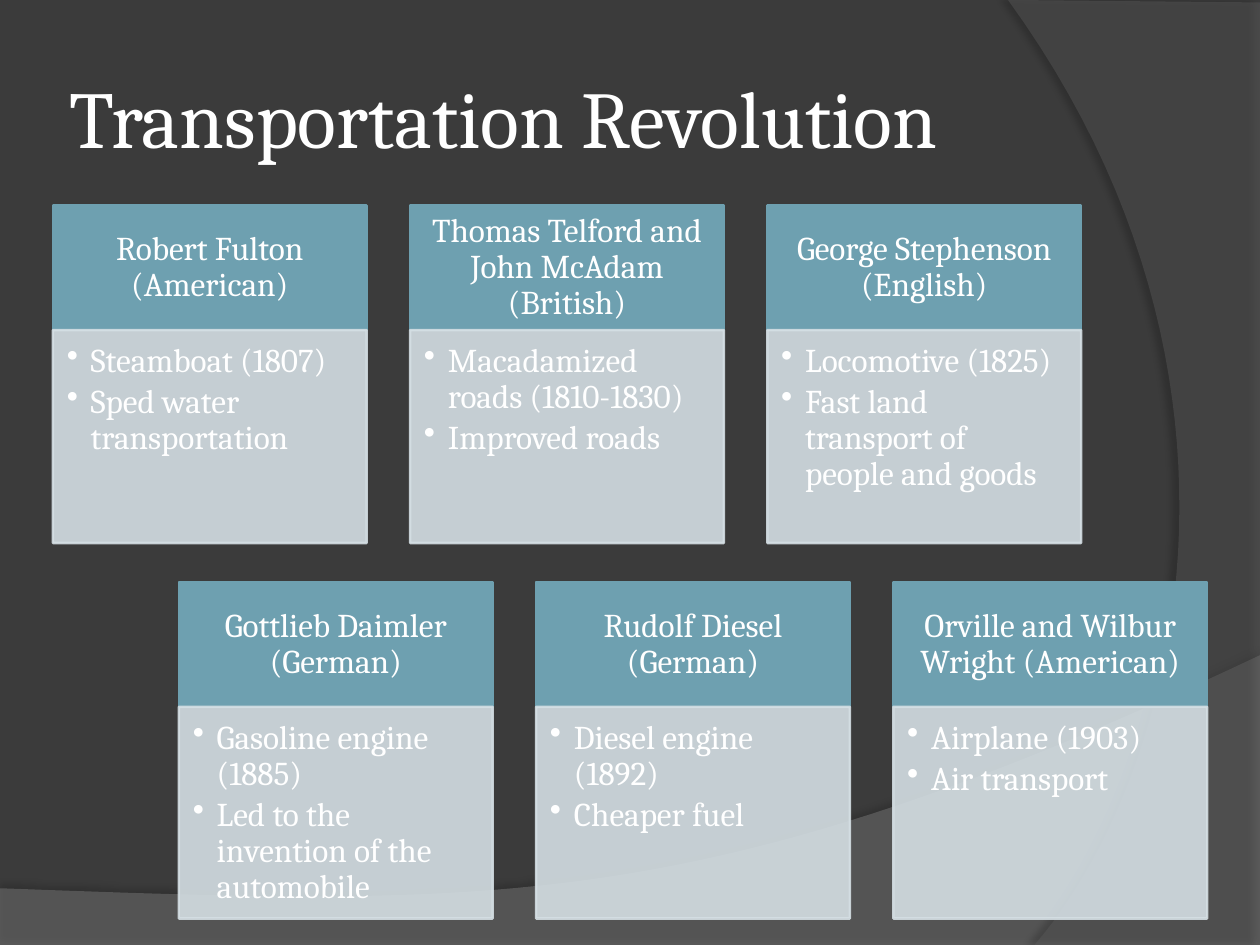
from dataclasses import dataclass

from lxml import etree
from pptx import Presentation
from pptx.dml.color import RGBColor
from pptx.enum.shapes import MSO_SHAPE
from pptx.enum.text import MSO_ANCHOR, PP_ALIGN
from pptx.oxml.ns import qn
from pptx.util import Inches, Pt

RECTANGLE = MSO_SHAPE.RECTANGLE
TOP = MSO_ANCHOR.TOP
MIDDLE = MSO_ANCHOR.MIDDLE
LEFT = PP_ALIGN.LEFT
CENTER = PP_ALIGN.CENTER


@dataclass(frozen=True)
class Theme:
    font: str = "Cambria"
    background: str = "3B3B3B"
    text: str = "FFFFFF"
    header: str = "6EA0B0"
    body: str = "D5DFE4"
    lower_wave: str = "7F7F7F"
    right_arc: str = "5E5E5E"
    shadow: str = "000000"
    title_size: float = 46
    card_size: float = 19
    border: float = 1.5


THEME = Theme()

CARD_WIDTH = 2.49
CARD_PITCH = 2.835
HEADER_HEIGHT = 0.99
HEADER_INSETS = (0.15, 0.08, 0.15, 0.08)
BODY_INSETS = (0.11, 0.11, 0.15, 0.17)
BULLET_INDENT = 0.19

ROWS = [
    (0.42, 1.63, 1.69, [
        ("Robert Fulton (American)", ["Steamboat (1807)", "Sped water transportation"]),
        ("Thomas Telford and John McAdam (British)",
         ["Macadamized roads (1810-1830)", "Improved roads"]),
        ("George Stephenson (English)",
         ["Locomotive (1825)", "Fast land transport of people and goods"]),
    ]),
    (1.42, 4.62, 1.68, [
        ("Gottlieb Daimler (German)",
         ["Gasoline engine (1885)", "Led to the invention of the automobile"]),
        ("Rudolf Diesel (German)", ["Diesel engine (1892)", "Cheaper fuel"]),
        ("Orville and Wilbur Wright (American)", ["Airplane (1903)", "Air transport"]),
    ]),
]


def set_attributes(target, values):
    for name, value in values.items():
        setattr(target, name, value)


def set_fill(fill, color, opacity=100):
    fill.solid()
    fill.fore_color.rgb = RGBColor.from_string(color)
    if opacity < 100:
        add_alpha(fill._xPr.find(qn("a:solidFill"))[0], opacity)


def add_alpha(color_element, opacity):
    etree.SubElement(color_element, qn("a:alpha"), val=str(opacity * 1000))


def add_shadow(shape, opacity, blur, distance, angle):
    effects = shape._element.spPr.find(qn("a:effectLst"))
    shadow = etree.SubElement(
        effects, qn("a:outerShdw"), blurRad=str(Pt(blur)), dist=str(Pt(distance)),
        dir=str(angle * 60000), algn="ctr", rotWithShape="0")
    color = etree.SubElement(shadow, qn("a:srgbClr"), val=THEME.shadow)
    add_alpha(color, opacity)


def curve_points(start, control_1, control_2, end, steps=48):
    points = []
    for step in range(1, steps + 1):
        t = step / steps
        weights = ((1 - t) ** 3, 3 * t * (1 - t) ** 2, 3 * t * t * (1 - t), t ** 3)
        points.append(tuple(
            sum(weight * value for weight, value in zip(weights, values))
            for values in zip(start, control_1, control_2, end)))
    return points


def add_backdrop(slide, points, color, opacity, shadow):
    corners = [(Inches(x), Inches(y)) for x, y in points]
    builder = slide.shapes.build_freeform(*corners[0])
    builder.add_line_segments(corners[1:], close=True)
    shape = builder.convert_to_shape()
    set_fill(shape.fill, color, opacity)
    shape.line.fill.background()
    shape.shadow.inherit = False
    add_shadow(shape, *shadow)


def write_text(shape, lines, size, anchor, insets, paragraph_format):
    frame = shape.text_frame
    margins = ("margin_left", "margin_top", "margin_right", "margin_bottom")
    set_attributes(frame, {"word_wrap": True, "vertical_anchor": anchor})
    set_attributes(frame, dict(zip(margins, map(Inches, insets))))
    for index, line in enumerate(lines):
        paragraph = frame.paragraphs[0] if index == 0 else frame.add_paragraph()
        set_attributes(paragraph, paragraph_format)
        run = paragraph.add_run()
        run.text = line
        set_attributes(run.font, {"name": THEME.font, "size": Pt(size)})
        run.font.color.rgb = RGBColor.from_string(THEME.text)


def add_bullets(shape):
    indent = Inches(BULLET_INDENT)
    for paragraph in shape.text_frame.paragraphs:
        properties = paragraph._p.get_or_add_pPr()
        properties.set("marL", str(indent))
        properties.set("indent", str(-indent))
        etree.SubElement(properties, qn("a:buChar"), char="•")


def add_panel(group, left, top, height, color, opacity=100):
    shape = group.shapes.add_shape(
        RECTANGLE, Inches(left), Inches(top), Inches(CARD_WIDTH), Inches(height))
    shape.shadow.inherit = False
    set_fill(shape.fill, color, opacity)
    set_fill(shape.line.fill, color, opacity)
    shape.line.width = Pt(THEME.border)
    return shape


def add_card(group, left, top, body_height, heading, points):
    header = add_panel(group, left, top, HEADER_HEIGHT, THEME.header)
    write_text(header, [heading], THEME.card_size, MIDDLE, HEADER_INSETS,
               {"alignment": CENTER, "line_spacing": 0.9})
    body = add_panel(group, left, top + HEADER_HEIGHT, body_height, THEME.body, 90)
    write_text(body, points, THEME.card_size, TOP, BODY_INSETS,
               {"alignment": LEFT, "line_spacing": 0.9, "level": 1,
                "space_after": Pt(0.15 * THEME.card_size)})
    add_bullets(body)


def add_title(slide, text):
    box = slide.shapes.add_textbox(Inches(0.5), Inches(0.3), Inches(8.17), Inches(1.25))
    write_text(box, [text], THEME.title_size, MIDDLE, (0.05,) * 4, {"alignment": LEFT})


def main():
    presentation = Presentation()
    set_attributes(presentation, {"slide_width": Inches(10), "slide_height": Inches(7.5)})
    slide = presentation.slides.add_slide(presentation.slide_layouts[6])
    set_fill(slide.background.fill, THEME.background)

    wave = curve_points((10, 5.2), (5.59, 7.29), (3.91, 7.19), (0, 7.05))
    add_backdrop(slide, [(0, 7.51), (10, 7.51), (10, 5.2)] + wave,
                 THEME.lower_wave, 45, (35, 4, 3.5, 270))
    arc = curve_points((8.21, 7.5), (9.35, 6.19), (10.18, 3), (8, 0))
    add_backdrop(slide, [(10, 0.02), (10, 7.5), (8.21, 7.5)] + arc,
                 THEME.right_arc, 40, (45, 4, 4, 180))

    add_title(slide, "Transportation Revolution")
    for left, top, body_height, cards in ROWS:
        group = slide.shapes.add_group_shape()
        for column, (heading, points) in enumerate(cards):
            add_card(group, left + column * CARD_PITCH, top, body_height, heading, points)

    presentation.save("out.pptx")


if __name__ == "__main__":
    main()
